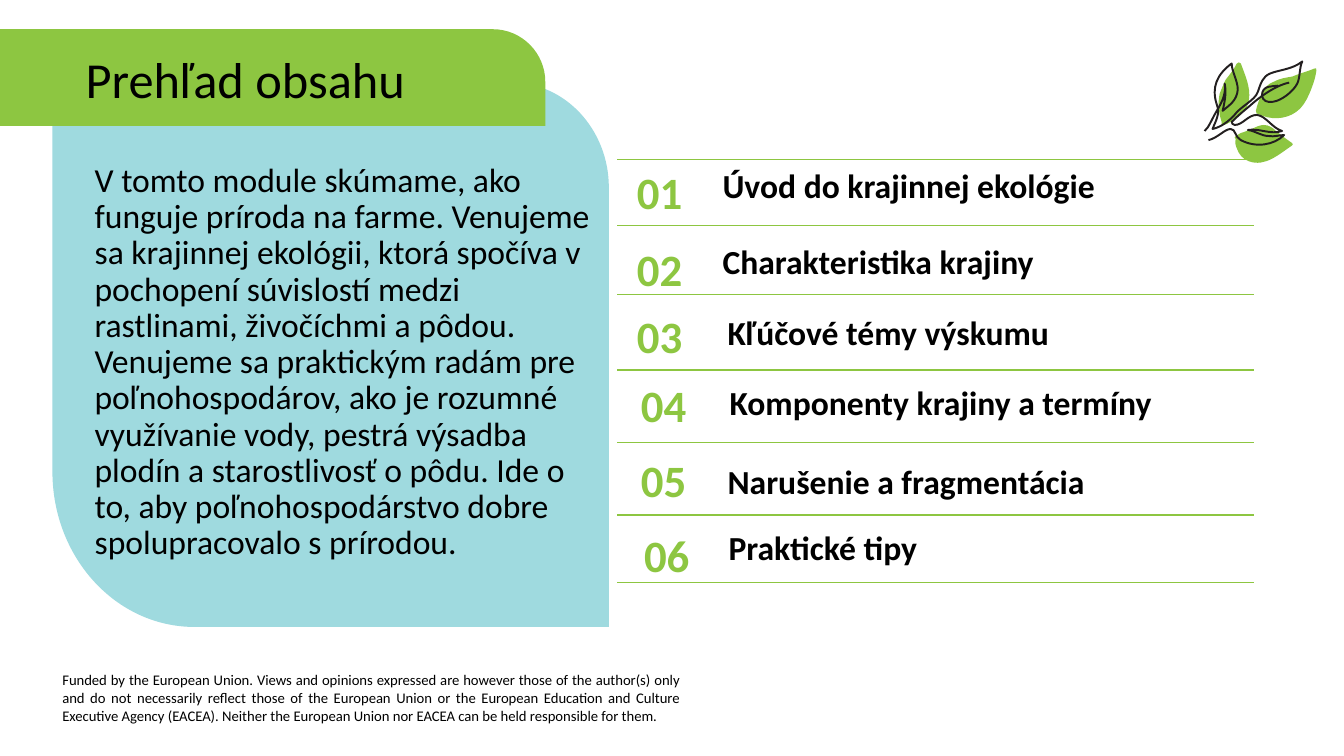
"""Build the module contents slide with six numbered topics."""
from dataclasses import dataclass

import pptx
import pptx.dml.color
import pptx.enum.shapes
import pptx.enum.text
import pptx.oxml
import pptx.oxml.ns
import pptx.util

EMU_PER_PX = 9144
FONT = "Calibri"
COLORS = {"green": "8DC641", "aqua": "9FDADF", "ink": "231F20", "black": "000000"}
ALIGN = pptx.enum.text.PP_ALIGN
ANCHOR = pptx.enum.text.MSO_ANCHOR


@dataclass(frozen=True)
class Contour:
    start: tuple[int, int]
    steps: tuple[tuple[int, ...], ...]


@dataclass(frozen=True)
class Topic:
    name: str
    number_left: int
    number_top: int
    name_left: int
    name_top: int
    name_width: int


@dataclass(frozen=True)
class Style:
    size: float
    color: str = "black"
    bold: bool = False
    align: ALIGN = ALIGN.LEFT
    anchor: ANCHOR = ANCHOR.MIDDLE
    spacing: float = 0.9
    margin: int = 0


PANEL = Contour((604, 622), (
    (193, 622), (115, 622, 52, 553, 52, 468), (52, 82), (508, 82),
    (561, 82, 604, 129, 604, 186)))
BANNER = Contour((-2, 29), (
    (489, 29), (518, 29, 541, 53, 541, 81), (541, 125), (0, 125), (0, 48),
    (0, 44, 0, 41, -1, 37)))
LEAVES = (
    Contour((1217, 123), (
        (1227, 118, 1238, 110, 1239, 99), (1241, 87, 1235, 74, 1231, 63),
        (1230, 61, 1228, 62, 1227, 63), (1224, 69, 1220, 74, 1216, 79),
        (1214, 83, 1212, 88, 1210, 93), (1208, 102, 1209, 112, 1212, 121),
        (1211, 123, 1212, 125, 1214, 124))),
    Contour((1286, 111), (
        (1292, 107, 1296, 100, 1299, 93), (1302, 86, 1305, 78, 1306, 70),
        (1307, 68, 1305, 67, 1304, 68), (1297, 71, 1289, 73, 1282, 76),
        (1276, 77, 1269, 78, 1264, 81), (1258, 83, 1255, 87, 1252, 92),
        (1250, 98, 1247, 104, 1246, 110), (1246, 112, 1247, 113, 1248, 113),
        (1260, 119, 1275, 119, 1286, 111))),
    Contour((1281, 145), (
        (1283, 144, 1283, 143, 1282, 142), (1276, 138, 1271, 134, 1266, 130),
        (1263, 127, 1259, 124, 1254, 124), (1250, 124, 1246, 126, 1242, 128),
        (1239, 129, 1235, 131, 1231, 132), (1229, 133, 1228, 133, 1226, 135),
        (1224, 135, 1225, 138, 1226, 138), (1225, 141, 1226, 145, 1227, 147),
        (1229, 153, 1233, 158, 1239, 160), (1255, 166, 1269, 153, 1281, 145))),
)
VEINS = (
    Contour((1207, 103), (
        (1202, 87, 1207, 74, 1222, 63), (1222, 71, 1228, 80, 1228, 89),
        (1227, 100, 1220, 104, 1213, 110), (1215, 101, 1217, 92, 1215, 83),
        (1217, 95, 1210, 105, 1206, 112), (1202, 119, 1199, 127, 1195, 130))),
    Contour((1207, 103), (
        (1211, 113, 1206, 120, 1203, 128), (1212, 126, 1219, 120, 1224, 115),
        (1231, 105, 1245, 100, 1248, 91), (1251, 82, 1253, 76, 1260, 73),
        (1270, 69, 1282, 69, 1292, 61), (1289, 67, 1290, 77, 1287, 83),
        (1283, 91, 1271, 100, 1263, 101), (1257, 102, 1253, 100, 1252, 95),
        (1252, 84, 1263, 86, 1268, 85))),
    Contour((1279, 82), (
        (1268, 84, 1252, 94, 1240, 105), (1234, 110, 1228, 115, 1222, 121),
        (1222, 122, 1223, 124, 1225, 124), (1233, 124, 1238, 114, 1247, 114),
        (1256, 115, 1262, 127, 1272, 130), (1260, 134, 1250, 127, 1238, 129),
        (1246, 130, 1251, 135, 1259, 135), (1264, 136, 1269, 134, 1274, 134),
        (1264, 144, 1246, 147, 1231, 139), (1225, 136, 1226, 128, 1221, 128),
        (1215, 128, 1208, 137, 1199, 139))),
)
RULE_TOPS = (158, 224, 292, 367, 439, 511, 578)
TOPICS = (
    Topic("Úvod do krajinnej ekológie", 616, 156, 707, 149, 545),
    Topic("Charakteristika krajiny", 616, 232, 707, 224, 488),
    Topic("Kľúčové témy výskumu", 616, 299, 712, 294, 488),
    Topic("Komponenty krajiny a termíny", 620, 367, 714, 364, 566),
    Topic("Narušenie a fragmentácia", 620, 442, 712, 442, 488),
    Topic("Praktické tipy", 623, 516, 713, 508, 488),
)
SUMMARY = (
    "V tomto module skúmame, ako funguje príroda na farme. Venujeme sa krajinnej "
    "ekológii, ktorá spočíva v pochopení súvislostí medzi rastlinami, živočíchmi a pôdou.",
    "Venujeme sa praktickým radám pre poľnohospodárov, ako je rozumné využívanie vody, "
    "pestrá výsadba plodín a starostlivosť o pôdu. Ide o to, aby poľnohospodárstvo dobre "
    "spolupracovalo s prírodou.",
)
DISCLAIMER = (
    "Funded by the European Union. Views and opinions expressed are however those of the "
    "author(s) only and do not necessarily reflect those of the European Union or the "
    "European Education and Culture Executive Agency (EACEA). Neither the European Union "
    "nor EACEA can be held responsible for them."
)


def px(value: int) -> int:
    return value * EMU_PER_PX


def rgb(name: str) -> pptx.dml.color.RGBColor:
    return pptx.dml.color.RGBColor.from_string(COLORS[name])


def draw_outline(shapes, contours: tuple[Contour, ...], color: str, filled: bool = True) -> None:
    builder = shapes.build_freeform(*contours[0].start, scale=EMU_PER_PX)
    for index, contour in enumerate(contours):
        if index:
            builder.move_to(*contour.start)
        builder.add_line_segments([step[-2:] for step in contour.steps], close=filled)
    shape = builder.convert_to_shape()
    steps = [step for contour in contours for step in contour.steps]
    corners = [contour.start for contour in contours] + [step[-2:] for step in steps]
    left, top = (min(values) for values in zip(*corners))
    nodes = list(shape.element.iter(pptx.oxml.ns.qn("a:lnTo")))
    for node, step in zip(nodes, steps):
        if len(step) == 6:
            node.tag = pptx.oxml.ns.qn("a:cubicBezTo")
            for place in (0, 1):
                x, y = step[2 * place] - left, step[2 * place + 1] - top
                node.insert(place, pptx.oxml.parse_xml(
                    f'<a:pt {pptx.oxml.ns.nsdecls("a")} x="{x}" y="{y}"/>'))
    shape.shadow.inherit = False
    if filled:
        shape.fill.solid()
        shape.fill.fore_color.rgb = rgb(color)
        shape.line.fill.background()
    else:
        shape.fill.background()
        shape.line.color.rgb = rgb(color)
        shape.line.width = pptx.util.Pt(1.4)


def draw_rule(page: pptx.slide.Slide, top: int) -> None:
    rule = page.shapes.add_connector(
        pptx.enum.shapes.MSO_CONNECTOR.STRAIGHT, px(1244), px(top), px(612), px(top))
    rule.line.color.rgb = rgb("green")
    rule.line.width = pptx.util.Pt(1)
    properties = rule.element.find(pptx.oxml.ns.qn("p:spPr"))
    properties.append(pptx.oxml.parse_xml(f'<a:effectLst {pptx.oxml.ns.nsdecls("a")}/>'))


def write(frame: pptx.text.text.TextFrame, texts: tuple[str, ...], style: Style) -> None:
    frame.word_wrap = True
    frame.auto_size = pptx.enum.text.MSO_AUTO_SIZE.NONE
    frame.vertical_anchor = style.anchor
    for index, text in enumerate(texts):
        para = frame.add_paragraph() if index else frame.paragraphs[0]
        para.alignment = style.align
        para.line_spacing = style.spacing
        if style.margin:
            para._p.get_or_add_pPr().set("marL", str(px(style.margin)))
        span = para.add_run()
        span.text = text
        span.font.name = FONT
        span.font.size = pptx.util.Pt(style.size)
        span.font.bold = style.bold
        span.font.color.rgb = rgb(style.color)


def add_text(page: pptx.slide.Slide, area: tuple[int, int, int, int],
             texts: tuple[str, ...], style: Style) -> None:
    box = page.shapes.add_textbox(*map(px, area))
    write(box.text_frame, texts, style)


def main() -> None:
    deck = pptx.Presentation()
    deck.slide_width, deck.slide_height = pptx.util.Emu(12192000), px(750)
    page = deck.slides.add_slide(deck.slide_layouts[5])
    draw_outline(page.shapes, (PANEL,), "aqua")
    draw_outline(page.shapes, (BANNER,), "green")
    for top in RULE_TOPS:
        draw_rule(page, top)
    title = page.shapes.title
    title.left, title.top, title.width, title.height = map(px, (75, 42, 551, 79))
    write(title.text_frame, ("Prehľad obsahu",), Style(36))
    page.shapes.element.append(title.element)
    add_text(page, (59, 157, 542, 436), SUMMARY, Style(24, anchor=ANCHOR.TOP, margin=25))
    add_text(page, (52, 661, 633, 66), (DISCLAIMER,),
             Style(10.5, align=ALIGN.JUSTIFY, anchor=ANCHOR.TOP, spacing=1.0))
    for number, topic in enumerate(TOPICS, 1):
        add_text(page, (topic.number_left, topic.number_top, 77, 75), (f"{number:02}",),
                 Style(32, "green", True, ALIGN.CENTER))
        add_text(page, (topic.name_left, topic.name_top, topic.name_width, 75),
                 (topic.name,), Style(24, bold=True))
    sprig = page.shapes.add_group_shape()
    for leaf in LEAVES:
        draw_outline(sprig.shapes, (leaf,), "green")
    draw_outline(sprig.shapes, VEINS, "ink", filled=False)
    deck.save("out.pptx")


if __name__ == "__main__":
    main()
